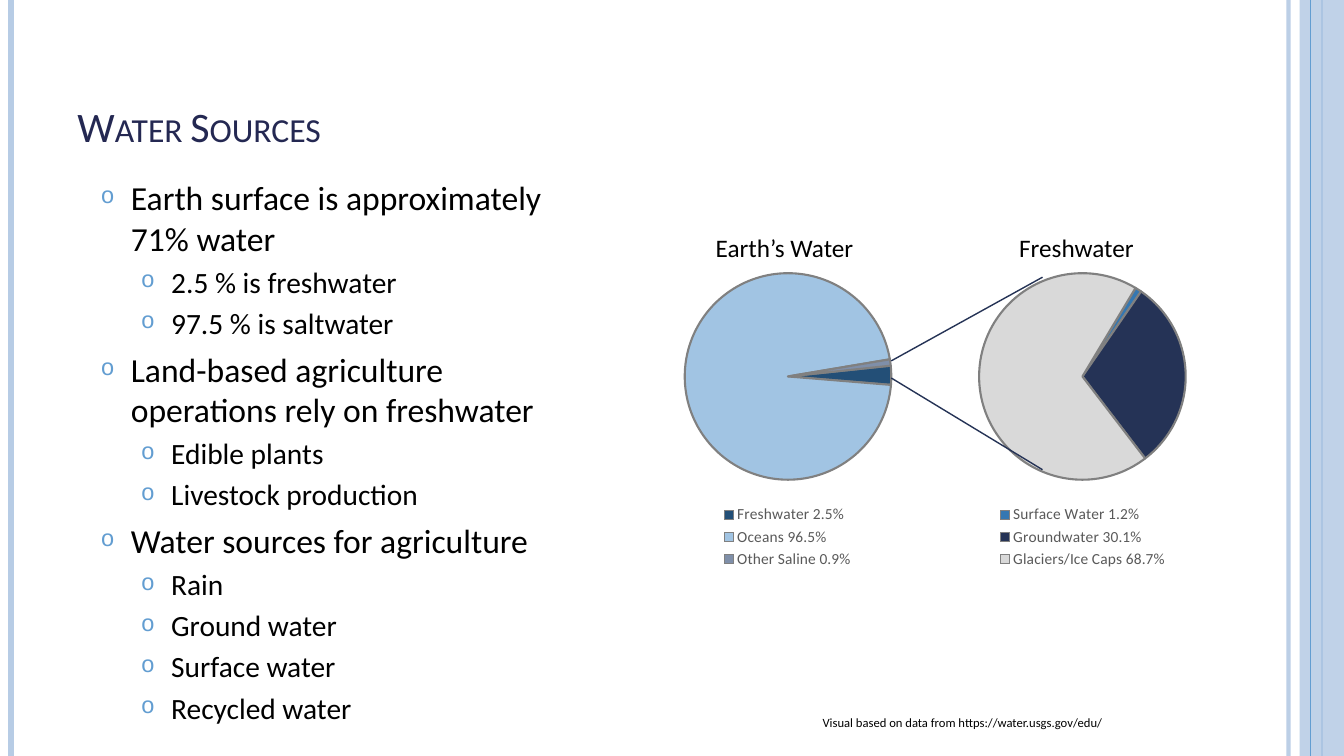
from lxml import etree
from pptx import Presentation
from pptx import util as u
from pptx.chart import data
from pptx.dml import color
from pptx.enum import chart as ch, shapes, text
from pptx.oxml import ns

INK = {"black": "000000", "title": "242852", "pale": "B7CCE5", "blue": "629DD1",
       "navy": "253356", "deep": "234F77", "sky": "A1C4E3", "slate": "7F8FA9",
       "mid": "3477B2", "grey": "D9D9D9", "edge": "808080", "label": "595959"}

BODY = [
    ("Earth surface is approximately 71% water",
     ["2.5 % is freshwater", "97.5 % is saltwater"]),
    ("Land-based agriculture operations rely on freshwater",
     ["Edible plants", "Livestock production"]),
    ("Water sources for agriculture",
     ["Rain", "Ground water", "Surface water", "Recycled water"]),
]

EARTH = [("Freshwater 2.5%", 3, "deep"), ("Oceans 96.5%", 97, "sky"),
         ("Other Saline 0.9%", 1, "slate")]
FRESH = [("Surface Water 1.2%", 1, "mid"), ("Groundwater 30.1%", 30, "navy"),
         ("Glaciers/Ice Caps 68.7%", 69, "grey")]


def tint(name):
    return color.RGBColor.from_string(INK[name])


def child(node, tag, **attrs):
    part = etree.SubElement(node, ns.qn(tag))
    for key, val in attrs.items():
        part.set(key, str(val))
    return part


def fade(fill, share):
    child(fill.find(".//" + ns.qn("a:srgbClr")), "a:alpha", val=share * 1000)


def frame(slide, box, anchor=text.MSO_ANCHOR.TOP, wrap=True):
    area = slide.shapes.add_textbox(*map(u.Inches, box)).text_frame
    area.word_wrap = wrap
    area.vertical_anchor = anchor
    return area


def write(para, words, size=18, ink="black", small=False):
    run = para.add_run()
    run.text = words
    run.font.name = "Calibri"
    run.font.size = u.Pt(size)
    run.font.color.rgb = tint(ink)
    if small:
        run.font._element.set("cap", "small")


def rule(slide, start, end, ink, width, share=None):
    line = slide.shapes.add_connector(
        shapes.MSO_CONNECTOR.STRAIGHT, *map(u.Inches, start + end))
    line.line.color.rgb = tint(ink)
    line.line.width = u.Pt(width)
    if share:
        fade(line._element.spPr, share)
    child(line._element.spPr, "a:effectLst")


def edges(slide, box):
    left, top, wide, high = box
    base = top + high

    def post(x, ink, width, share=None):
        rule(slide, (left + x, top), (left + x, base), ink, width, share)

    post(12.78, "pale", 3, 93)
    post(0.11, "pale", 4.5)
    post(13.11, "blue", 1.5)
    band = slide.shapes.add_shape(
        shapes.MSO_SHAPE.RECTANGLE,
        *map(u.Inches, (left + wide - 0.44, top, 0.44, high)))
    band.shadow.inherit = False
    band.fill.solid()
    band.fill.fore_color.rgb = tint("pale")
    fade(band._element.spPr, 87)
    band.line.fill.background()
    post(13, "blue", 0.75)


def bullet(para, level):
    props = para._p.get_or_add_pPr()
    props.set("marL", str(u.Inches(0.7 if level else 0.3)))
    props.set("indent", str(u.Inches(-0.3)))
    child(child(props, "a:buClr"), "a:srgbClr", val=INK["blue"])
    child(props, "a:buSzPct", val=80000 if level else 70000)
    child(props, "a:buFont", typeface="Courier New")
    child(props, "a:buChar", char="o")
    para.level = level


def points(slide, box):
    area = frame(slide, box)
    rows = [row for head, subs in BODY
            for row in [(head, 0)] + [(sub, 1) for sub in subs]]
    for num, (words, level) in enumerate(rows):
        para = area.add_paragraph() if num else area.paragraphs[0]
        bullet(para, level)
        para.space_before = u.Pt((4.2 if level else 6) if num else 0)
        write(para, words, size=21 if level else 24)


def layout(node, spot, size, inner=False):
    for old in node.findall(ns.qn("c:layout")):
        node.remove(old)
    place = etree.Element(ns.qn("c:layout"))
    manual = child(place, "c:manualLayout")
    if inner:
        child(manual, "c:layoutTarget", val="inner")
        node.insert(0, place)
    else:
        node.find(ns.qn("c:legendPos")).addnext(place)
    for axis in "xy":
        child(manual, f"c:{axis}Mode", val="edge")
    for key, val in zip("xywh", spot + size):
        child(manual, f"c:{key}", val=round(val, 3))


def pie(slide, box, parts, start, inset, key, span):
    wide, high = box[2:]
    names, vals, inks = zip(*parts)
    feed = data.CategoryChartData()
    feed.categories = names
    feed.add_series("Series 1", vals)
    chart = slide.shapes.add_chart(
        ch.XL_CHART_TYPE.PIE, *map(u.Inches, box), feed).chart
    chart.has_title = False
    chart.font.name = "TeX Gyre Schola"
    chart.font.size = u.Pt(10)
    chart.font.color.rgb = tint("black")
    plot = chart.plots[0]
    plot.vary_by_categories = True
    for num, ink in enumerate(inks):
        form = plot.series[0].points[num].format
        form.fill.solid()
        form.fill.fore_color.rgb = tint(ink)
        form.line.color.rgb = tint("edge")
        form.line.width = u.Pt(1.5)
    angle = plot._element.find(ns.qn("c:firstSliceAng"))
    if angle is None:
        angle = child(plot._element, "c:firstSliceAng")
    angle.set("val", str(start))

    chart.has_legend = True
    legend = chart.legend
    legend.position = ch.XL_LEGEND_POSITION.BOTTOM
    legend.include_in_layout = False
    legend.font.name = "Calibri"
    legend.font.size = u.Pt(11)
    legend.font.color.rgb = tint("label")
    layout(legend._element, (key / wide, 2.41 / high), (span / wide, 0.7 / high))
    layout(chart._chartSpace.chart.plotArea, (inset / wide, 0.14 / high),
           (2.05 / wide, 2.05 / high), inner=True)


def charts(slide, box):
    left, top = box[:2]
    low = top + 0.31
    pie(slide, (left, low, 2.79, 3.12), EARTH, 84, 0.37, 0.7, 1.38)
    pie(slide, (left + 2.91, low, 2.82, 3.12), FRESH, 31, 0.38, 0.54, 1.74)
    for near, far in ((1.32, 0.49), (1.49, 2.4)):
        rule(slide, (left + 2.42, top + near), (left + 3.92, top + far), "navy", 1)
    for words, x, wide in (("Earth’s Water", 0.58, 1.63), ("Freshwater", 3.59, 1.41)):
        area = frame(slide, (left + x, top, wide, 0.4), wrap=False)
        write(area.paragraphs[0], words)
    area = frame(slide, (left + 1.64, top + 4.78, 3.04, 0.25), wrap=False)
    write(area.paragraphs[0],
          "Visual based on data from https://water.usgs.gov/edu/", size=9)


def main():
    deck = Presentation()
    deck.slide_width, deck.slide_height = u.Inches(13.33), u.Inches(7.5)
    slide = deck.slides.add_slide(deck.slide_layouts[6])
    edges(slide, (0, 0, 13.33, 7.5))
    title = frame(slide, (0.67, 0.3, 10.89, 1.25), text.MSO_ANCHOR.BOTTOM)
    write(title.paragraphs[0], "Water Sources", size=30, ink="title", small=True)
    points(slide, (0.9, 1.71, 4.94, 5.33))
    charts(slide, (6.42, 2.26, 5.73, 5.04))
    deck.save("out.pptx")


if __name__ == "__main__":
    main()
